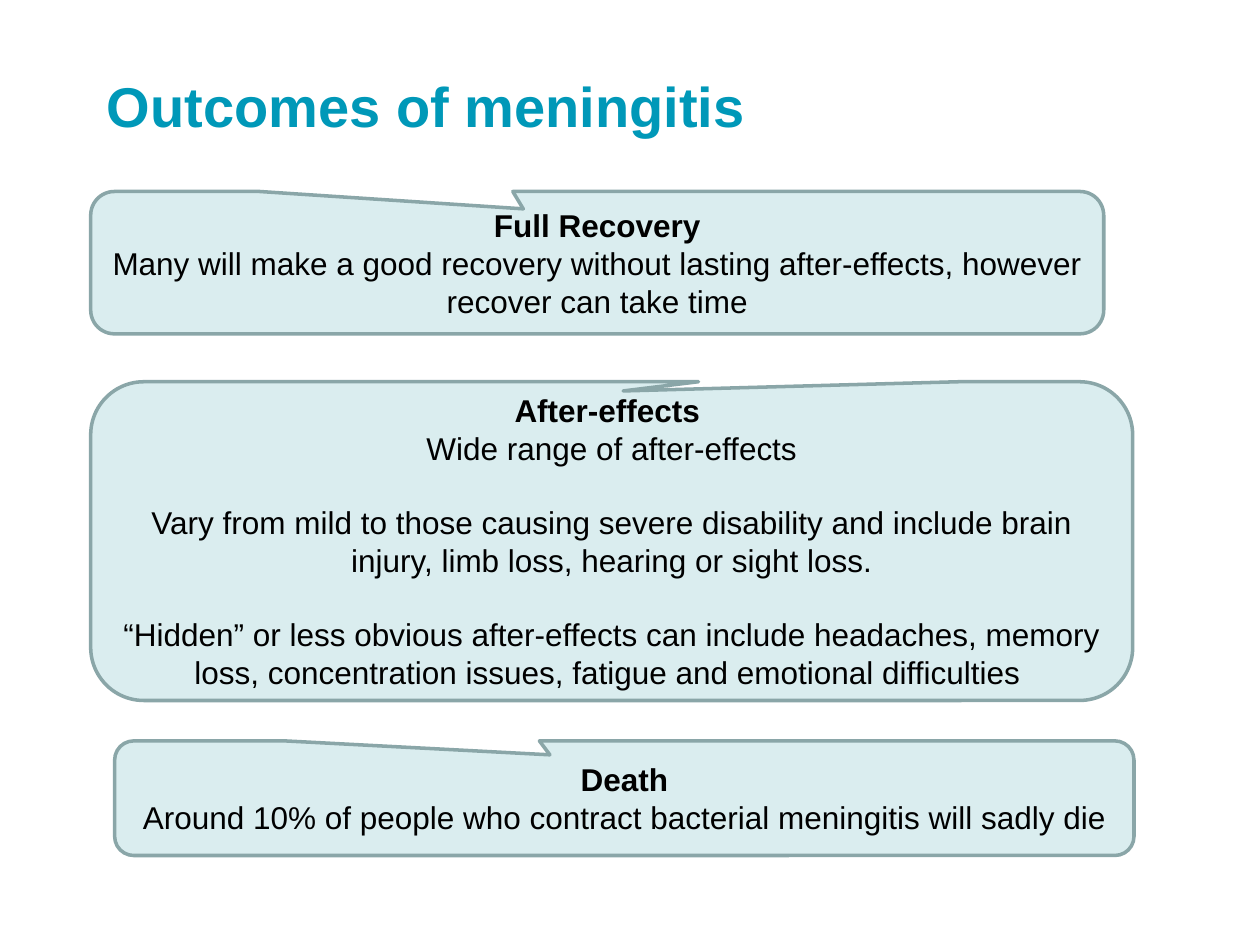
from pptx import Presentation
from pptx.dml.color import RGBColor
from pptx.enum.shapes import MSO_SHAPE
from pptx.enum.text import MSO_ANCHOR, PP_ALIGN
from pptx.util import Inches, Pt

COLORS = {"title": "0098B8", "fill": "DAEDEF", "line": "8AA6A8", "text": "000000"}
FONT = "Arial"
BODY_SIZE = 18
LINE_GAP = 20.7  # one line of body text, in points


class SlideBuilder:
    def __init__(self, slide):
        self.slide = slide

    def add_run(self, p, text, size, color, bold=False):
        r = p.add_run()
        r.text = text
        r.font.name = FONT
        r.font.size = Pt(size)
        r.font.bold = bold
        r.font.color.rgb = RGBColor.from_string(COLORS[color])

    def title(self, text, left, top, width, height):
        box = self.slide.shapes.add_textbox(
            Inches(left), Inches(top), Inches(width), Inches(height))
        tf = box.text_frame
        tf.word_wrap = True
        tf.vertical_anchor = MSO_ANCHOR.MIDDLE
        self.add_run(tf.paragraphs[0], text, 32, "title", bold=True)

    def callout(self, heading, lines, left, top, width, height, tip):
        """Add a callout; lines after the first are set one line apart."""
        sp = self.slide.shapes.add_shape(
            MSO_SHAPE.ROUNDED_RECTANGULAR_CALLOUT,
            Inches(left), Inches(top), Inches(width), Inches(height))
        sp.adjustments[0], sp.adjustments[1] = tip
        sp.shadow.inherit = False
        sp.fill.solid()
        sp.fill.fore_color.rgb = RGBColor.from_string(COLORS["fill"])
        sp.line.color.rgb = RGBColor.from_string(COLORS["line"])
        sp.line.width = Pt(2)

        tf = sp.text_frame
        tf.word_wrap = True
        tf.vertical_anchor = MSO_ANCHOR.MIDDLE
        p = tf.paragraphs[0]
        p.alignment = PP_ALIGN.CENTER
        self.add_run(p, heading, BODY_SIZE, "text", bold=True)
        for i, line in enumerate(lines):
            p = tf.add_paragraph()
            p.alignment = PP_ALIGN.CENTER
            if i:
                p.space_before = Pt(LINE_GAP)
            self.add_run(p, line, BODY_SIZE, "text")


def main():
    prs = Presentation()
    prs.slide_width, prs.slide_height = Inches(10), Inches(7.5)
    s = SlideBuilder(prs.slides.add_slide(prs.slide_layouts[6]))

    s.title("Outcomes of meningitis", 0.75, 0.21, 8.5, 1.25)
    left_tip = (-0.073, -0.378)
    s.callout(
        "Death",
        ["Around 10% of people who contract bacterial meningitis will sadly die"],
        0.91, 5.88, 8.09, 0.91, left_tip)
    s.callout(
        "After-effects ",
        ["Wide range of after-effects",
         "Vary from mild to those causing severe disability and include brain "
         "injury, limb loss, hearing or sight loss.",
         "“Hidden” or less obvious after-effects can include headaches, memory "
         "loss, concentration issues, fatigue and emotional difficulties "],
        0.72, 3.03, 8.27, 2.53, (0.011, -0.471))
    s.callout(
        "Full Recovery",
        ["Many will make a good recovery without lasting after-effects, "
         "however recover can take time"],
        0.72, 1.52, 8.04, 1.13, left_tip)
    prs.save("out.pptx")


if __name__ == "__main__":
    main()
